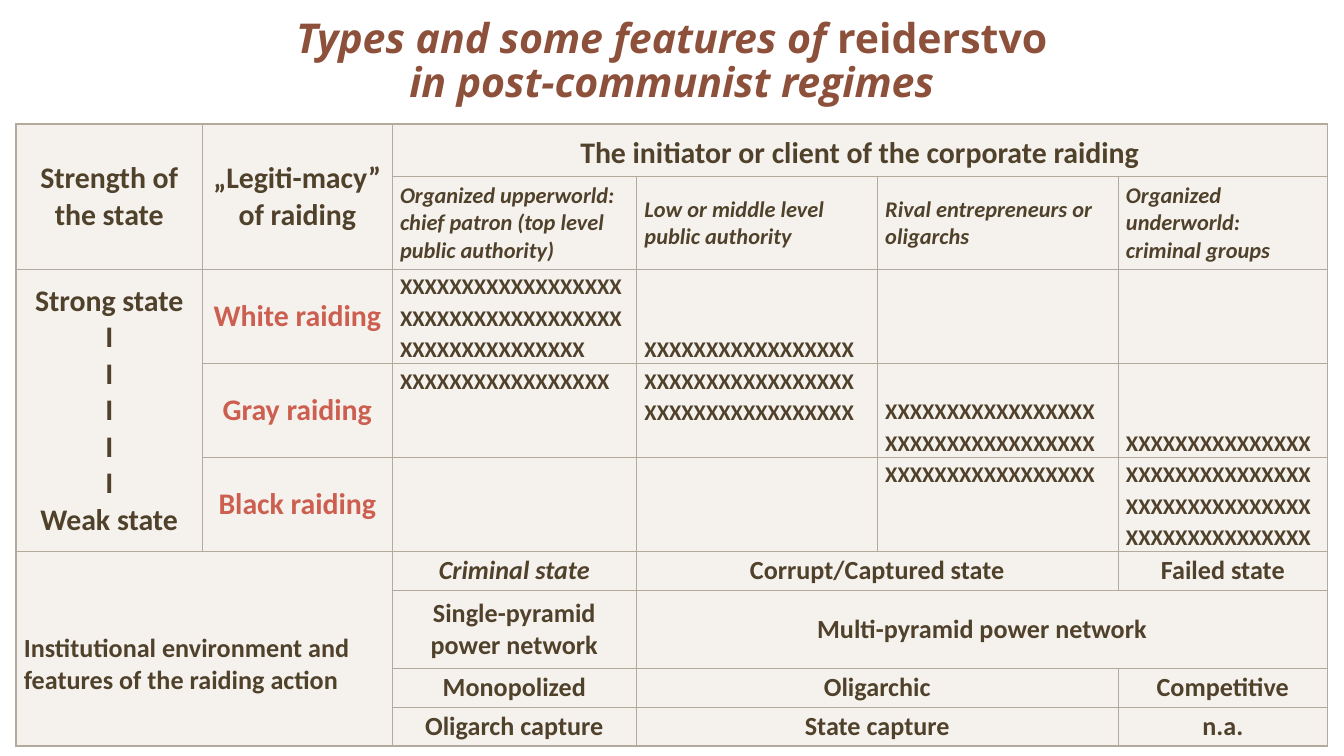
from lxml.etree import SubElement
from pptx import Presentation
from pptx.dml.color import RGBColor
from pptx.enum.text import MSO_ANCHOR as ANCHOR, PP_ALIGN as ALIGN
from pptx.oxml.ns import qn
from pptx.util import Cm, Pt

COLORS = {"title": "8D503B", "text": "50412B", "accent": "CD5F50",
          "fill": "EFEAE4", "border": "B3A99D"}
FILL_ALPHA = 60
MARGIN = 0.15

# Title: lines of (text, italic) runs
TITLE = [
    [("Types and some features of ", True), ("reiderstvo", False)],
    [("in post-communist regimes", True)],
]

COLS = [3.53, 3.58, 4.62, 4.55, 4.55, 3.96]
ROWS = [1, 1.75, 1.77, 1.77, 1.77, 0.73, 1.48, 0.73, 0.73]

# Cell styles
BASE = dict(size=16, color="text", italic=False, align=ALIGN.CENTER,
            anchor=ANCHOR.MIDDLE, spacing=1, top=0)
STYLES = {
    "head": BASE,
    "client": BASE | dict(size=12, italic=True, align=ALIGN.LEFT),
    "raiding": BASE | dict(color="accent"),
    "marks": BASE | dict(size=12, align=ALIGN.JUSTIFY, anchor=ANCHOR.TOP, spacing=1.15),
    "regime": BASE | dict(size=14),
}
STYLES["marks low"] = STYLES["marks"] | dict(anchor=ANCHOR.BOTTOM)
STYLES["initiator"] = BASE | dict(spacing=1.15)
STYLES["regime italic"] = STYLES["regime"] | dict(italic=True)
STYLES["features"] = STYLES["regime"] | dict(align=ALIGN.LEFT, top=0.59)

LONG, SHORT = "X" * 17, "X" * 15

# (row, column, style, paragraphs)
CELLS = [
    (0, 0, "head", ["Strength of the state"]),
    (0, 1, "head", ["„Legiti-macy”", "of raiding"]),
    (0, 2, "initiator", ["The initiator or client of the corporate raiding"]),
    (1, 2, "client", ["Organized upperworld: chief patron (top level public authority)"]),
    (1, 3, "client", ["Low or middle level public authority"]),
    (1, 4, "client", ["Rival entrepreneurs or oligarchs"]),
    (1, 5, "client", ["Organized underworld: criminal groups"]),
    (2, 0, "head", ["Strong state", *"IIIII", "Weak state"]),
    (2, 1, "raiding", ["White raiding"]),
    (2, 2, "marks", [LONG * 3]),
    (2, 3, "marks low", [LONG]),
    (3, 1, "raiding", ["Gray raiding"]),
    (3, 2, "marks", [LONG]),
    (3, 3, "marks", [LONG] * 2),
    (3, 4, "marks low", [LONG] * 2),
    (3, 5, "marks low", [SHORT]),
    (4, 1, "raiding", ["Black raiding"]),
    (4, 4, "marks", [LONG]),
    (4, 5, "marks", [SHORT] * 3),
    (5, 0, "features", ["Institutional environment and features of the raiding action"]),
    (5, 2, "regime italic", ["Criminal state"]),
    (5, 3, "regime", ["Corrupt/Captured state"]),
    (5, 5, "regime", ["Failed state"]),
    (6, 2, "regime", ["Single-pyramid power network"]),
    (6, 3, "regime", ["Multi-pyramid power network"]),
    (7, 2, "regime", ["Monopolized"]),
    (7, 3, "regime", ["Oligarchic"]),
    (7, 5, "regime", ["Competitive"]),
    (8, 2, "regime", ["Oligarch capture"]),
    (8, 3, "regime", ["State capture"]),
    (8, 5, "regime", ["n.a."]),
]

# (first row, first column): (last row, last column)
MERGES = {(0, 0): (1, 0), (0, 1): (1, 1), (0, 2): (0, 5), (2, 0): (4, 0),
          (5, 0): (8, 1), (5, 3): (5, 4), (6, 3): (6, 5), (7, 3): (7, 4),
          (8, 3): (8, 4)}


def rgb(name):
    return RGBColor.from_string(COLORS[name])


def set_font(font, name, size, color, italic):
    font.name, font.size, font.bold, font.italic = name, Pt(size), True, italic
    font.color.rgb = rgb(color)


def format_cell(cell, row, col):
    """Margins, borders and translucent fill; outer edges are heavier."""
    cell.margin_left = cell.margin_right = Cm(0.15)
    cell.margin_top = cell.margin_bottom = 0
    last_row, last_col = MERGES.get((row, col), (row, col))
    outer = {"lnL": col == 0, "lnR": last_col == len(COLS) - 1,
             "lnT": row == 0, "lnB": last_row == len(ROWS) - 1}
    tcPr = cell._tc.get_or_add_tcPr()
    for tag, is_outer in outer.items():
        ln = SubElement(tcPr, qn(f"a:{tag}"), w=str(Pt(1 if is_outer else 0.5)))
        line_fill = SubElement(ln, qn("a:solidFill"))
        SubElement(line_fill, qn("a:srgbClr"), val=COLORS["border"])
    fill = SubElement(tcPr, qn("a:solidFill"))
    clr = SubElement(fill, qn("a:srgbClr"), val=COLORS["fill"])
    SubElement(clr, qn("a:alpha"), val=str(FILL_ALPHA * 1000))


def write_cell(cell, style, lines):
    cell.vertical_anchor = style["anchor"]
    cell.margin_top = Cm(style["top"])
    tf = cell.text_frame
    tf.text = "\n".join(lines)
    for p in tf.paragraphs:
        p.alignment, p.line_spacing = style["align"], style["spacing"]
        for r in p.runs:
            set_font(r.font, "Calibri", style["size"], style["color"], style["italic"])


prs = Presentation()
prs.slide_width, prs.slide_height = Cm(25.4), Cm(14.28)
s = prs.slides.add_slide(prs.slide_layouts[5])
width = Cm(sum(COLS))

# Title
title = s.shapes.title
title.left, title.top, title.width, title.height = Cm(0.3), 0, width, Cm(2.34)
tf = title.text_frame
tf.vertical_anchor = ANCHOR.MIDDLE
for i, runs in enumerate(TITLE):
    p = tf.add_paragraph() if i else tf.paragraphs[0]
    p.alignment, p.line_spacing = ALIGN.CENTER, 0.9
    for text, italic in runs:
        r = p.add_run()
        r.text = text
        set_font(r.font, "Open Sans", 22, "title", italic)

# Table grid
table = s.shapes.add_table(len(ROWS), len(COLS), Cm(0.3), Cm(2.34),
                           width, Cm(sum(ROWS))).table
table.first_row = table.horz_banding = False
for column, w in zip(table.columns, COLS):
    column.width = Cm(w)
for row, h in zip(table.rows, ROWS):
    row.height = Cm(h)
for first, last in MERGES.items():
    table.cell(*first).merge(table.cell(*last))
for row in range(len(ROWS)):
    for col in range(len(COLS)):
        format_cell(table.cell(row, col), row, col)

# Table text
for row, col, style, lines in CELLS:
    write_cell(table.cell(row, col), STYLES[style], lines)

prs.save("out.pptx")
